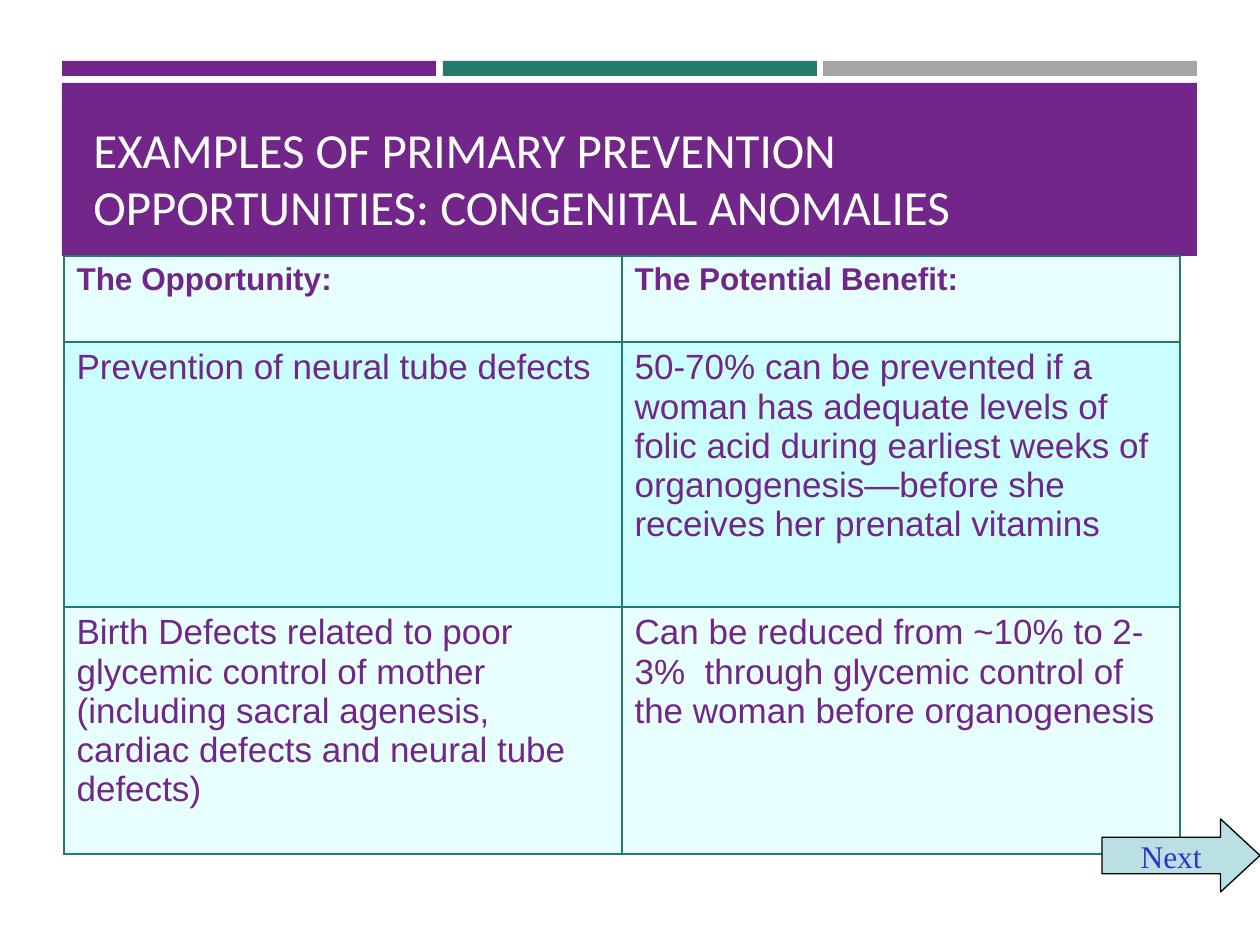
from dataclasses import dataclass

from lxml import etree
from pptx import Presentation
from pptx.dml.color import RGBColor
from pptx.enum.shapes import MSO_SHAPE
from pptx.enum.text import MSO_ANCHOR, PP_ALIGN
from pptx.oxml.ns import qn
from pptx.util import Emu, Pt

RECTANGLE = MSO_SHAPE.RECTANGLE
RIGHT_ARROW = MSO_SHAPE.RIGHT_ARROW
BOTTOM = MSO_ANCHOR.BOTTOM
MIDDLE = MSO_ANCHOR.MIDDLE
LEFT = PP_ALIGN.LEFT
CENTER = PP_ALIGN.CENTER

EMU_PER_PX = 914400 / 126
COLORS = {
    "purple": "722689",
    "green": "247A6C",
    "gray": "A5A5A5",
    "white": "FFFFFF",
    "pale": "E7FFFF",
    "aqua": "CBFFFF",
    "arrow": "BBE0E3",
    "black": "000000",
    "blue": "3333CC",
}


@dataclass
class Bar:
    left: int
    top: int
    width: int
    height: int
    color: str


@dataclass
class Row:
    height: int
    fill: str
    size: int
    bold: bool
    texts: tuple[str, str]


BARS = [
    Bar(62, 61, 374, 15, "purple"),
    Bar(443, 61, 374, 15, "green"),
    Bar(823, 61, 374, 15, "gray"),
    Bar(62, 83, 1135, 173, "purple"),
]
ROWS = [
    Row(86, "pale", 18, True, ("The Opportunity:", "The Potential Benefit:")),
    Row(265, "aqua", 20, False, (
        "Prevention of neural tube defects",
        "50-70% can be prevented if a woman has adequate levels of folic acid during "
        "earliest weeks of organogenesis—before she receives her prenatal vitamins",
    )),
    Row(247, "pale", 20, False, (
        "Birth Defects related to poor glycemic control of mother (including sacral "
        "agenesis, cardiac defects and neural tube defects)",
        "Can be reduced from ~10% to 2-3%  through glycemic control of the woman "
        "before organogenesis",
    )),
]
COLUMN_WIDTH = 558


def px(value: int) -> Emu:
    return Emu(round(value * EMU_PER_PX))


def rgb(name: str) -> RGBColor:
    return RGBColor.from_string(COLORS[name])


def write(frame, text: str, *, font: str, size: int, color: str,
          bold: bool = False, align=LEFT, spacing: float = 1.0) -> None:
    para = frame.paragraphs[0]
    para.alignment = align
    para.line_spacing = spacing
    span = para.add_run()
    span.text = text
    span.font.name = font
    span.font.size = Pt(size)
    span.font.bold = bold
    span.font.color.rgb = rgb(color)


def add_filled(page, kind, bar: Bar):
    shape = page.shapes.add_shape(
        kind, px(bar.left), px(bar.top), px(bar.width), px(bar.height))
    shape.shadow.inherit = False
    shape.fill.solid()
    shape.fill.fore_color.rgb = rgb(bar.color)
    shape.line.fill.background()
    return shape


def add_title(page) -> None:
    box = page.shapes.add_textbox(px(81), px(95), px(1101), px(148))
    frame = box.text_frame
    frame.word_wrap = True
    frame.vertical_anchor = BOTTOM
    frame.margin_right = px(60)
    write(frame, "EXAMPLES OF PRIMARY PREVENTION OPPORTUNITIES: CONGENITAL ANOMALIES",
          font="Calibri", size=28, color="white", spacing=0.97)


def add_borders(cell, color: str) -> None:
    properties = cell._tc.get_or_add_tcPr()
    for index, side in enumerate(("lnL", "lnR", "lnT", "lnB")):
        line = etree.Element(qn(f"a:{side}"), w=str(Pt(1)))
        fill = etree.SubElement(line, qn("a:solidFill"))
        etree.SubElement(fill, qn("a:srgbClr"), val=COLORS[color])
        properties.insert(index, line)


def add_benefits_table(page, rows: list[Row]) -> None:
    height = sum(row.height for row in rows)
    table = page.shapes.add_table(
        len(rows), 2, px(64), px(256), px(2 * COLUMN_WIDTH), px(height)).table
    table.first_row = False
    table.horz_banding = False
    for column in table.columns:
        column.width = px(COLUMN_WIDTH)
    for row, table_row in zip(rows, table.rows):
        table_row.height = px(row.height)
        for cell, text in zip(table_row.cells, row.texts):
            cell.fill.solid()
            cell.fill.fore_color.rgb = rgb(row.fill)
            add_borders(cell, "green")
            write(cell.text_frame, text, font="Arial", size=row.size,
                  color="purple", bold=row.bold)


def add_next_arrow(page) -> None:
    arrow = add_filled(page, RIGHT_ARROW, Bar(1102, 819, 158, 73, "arrow"))
    arrow.adjustments[0] = 0.5
    arrow.adjustments[1] = 0.54
    arrow.line.color.rgb = rgb("black")
    arrow.line.width = Pt(0.75)
    frame = arrow.text_frame
    frame.word_wrap = False
    frame.vertical_anchor = MIDDLE
    write(frame, "Next", font="Times New Roman", size=18, color="blue", align=CENTER)


def main() -> None:
    deck = Presentation()
    deck.slide_width = px(1260)
    deck.slide_height = px(945)
    page = deck.slides.add_slide(deck.slide_layouts[6])
    for bar in BARS:
        add_filled(page, RECTANGLE, bar)
    add_title(page)
    add_benefits_table(page, ROWS)
    add_next_arrow(page)
    deck.save("out.pptx")


if __name__ == "__main__":
    main()
